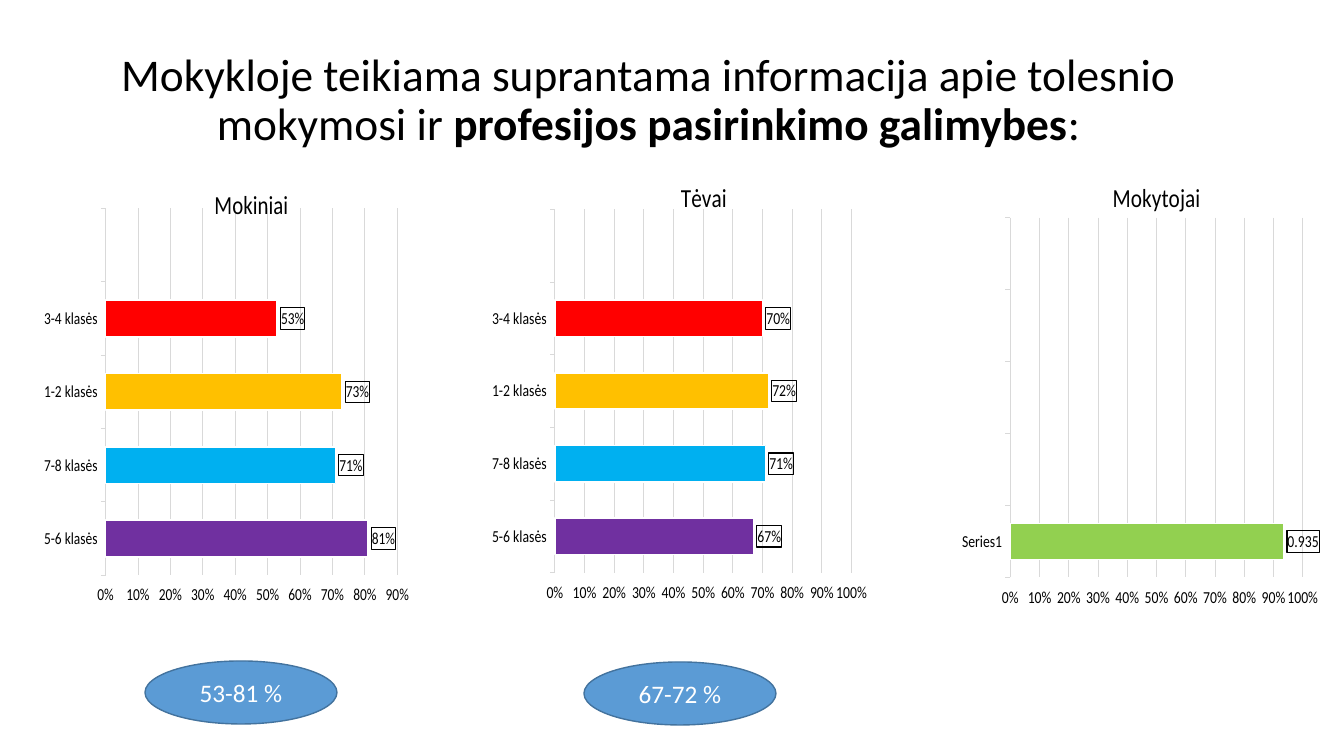
from lxml.etree import SubElement
from pptx import Presentation
from pptx.chart.data import CategoryChartData
from pptx.dml.color import RGBColor
from pptx.enum.chart import XL_CHART_TYPE, XL_LABEL_POSITION, XL_TICK_MARK
from pptx.enum.shapes import MSO_SHAPE
from pptx.enum.text import MSO_ANCHOR, PP_ALIGN
from pptx.oxml import parse_xml
from pptx.oxml.ns import nsdecls, qn
from pptx.util import Emu, Pt

BLACK = RGBColor(0x00, 0x00, 0x00)
WHITE = RGBColor(0xFF, 0xFF, 0xFF)
GRID = RGBColor(0xD9, 0xD9, 0xD9)
RED = RGBColor(0xFF, 0x00, 0x00)
AMBER = RGBColor(0xFF, 0xC0, 0x00)
SKY = RGBColor(0x00, 0xB0, 0xF0)
PURPLE = RGBColor(0x70, 0x30, 0xA0)
GREEN = RGBColor(0x92, 0xD0, 0x50)
BLUE = RGBColor(0x5B, 0x9B, 0xD5)
OUTLINE = RGBColor(0x43, 0x73, 0x9E)


def px(*lengths):
    return [Emu(round(length * 914400 / 100.8)) for length in lengths]


def style_font(font, size, color=BLACK, bold=False):
    for key, value in dict(name="Calibri", size=Pt(size), bold=bold).items():
        setattr(font, key, value)
    font.color.rgb = color


presentation = Presentation()
presentation.slide_width, presentation.slide_height = px(1344, 756)
slide = presentation.slides.add_slide(presentation.slide_layouts[6])

# Heading
heading = slide.shapes.add_textbox(*px(86, 0, 1125, 141)).text_frame
heading.word_wrap = True
heading.vertical_anchor = MSO_ANCHOR.TOP
heading.margin_top = px(52)[0]
question = heading.paragraphs[0]
question.alignment = PP_ALIGN.CENTER
question.line_spacing = 0.9
for words, bold in [
    ("Mokykloje teikiama suprantama informacija apie tolesnio mokymosi ir ", False),
    ("profesijos pasirinkimo galimybes", True),
    (":", False),
]:
    run = question.add_run()
    run.text = words
    style_font(run.font, 32.4, bold=bold)

# One bar chart per group of respondents
grades = ["5-6 klasės", "7-8 klasės", "1-2 klasės", "3-4 klasės", ""]
grade_colors = [PURPLE, SKY, AMBER, RED]
groups = [
    ("Mokiniai", (44, 167, 365, 477), grades, [0.81, 0.71, 0.73, 0.53, None],
     grade_colors, 0.9, "0%", (0, 0.087, 1, 0.769)),
    ("Tėvai", (492, 159, 375, 485), grades, [0.67, 0.71, 0.72, 0.7, None],
     grade_colors, 1, "0%", (0.014, 0.104, 0.968, 0.749)),
    ("Mokytojai", (962, 159, 358, 485), ["Series1", "", "", "", ""],
     [0.935, None, None, None, None], [GREEN], 1, "General", (0, 0.121, 1, 0.742)),
]
for group, box, categories, shares, colors, top_share, label_format, plot_box in groups:
    data = CategoryChartData()
    data.categories = categories
    data.add_series(group, shares)
    chart = slide.shapes.add_chart(XL_CHART_TYPE.BAR_CLUSTERED, *px(*box), data).chart
    chart.has_legend = False
    style_font(chart.font, 10)
    chart.has_title = True
    chart.chart_title.text_frame.text = group
    style_font(chart.chart_title.text_frame.paragraphs[0].runs[0].font, 18.6)

    share_axis = chart.value_axis
    for axis in (chart.category_axis, share_axis):
        axis.major_tick_mark = XL_TICK_MARK.OUTSIDE
        style_font(axis.tick_labels.font, 12)
    for line in (chart.category_axis.format.line, share_axis.major_gridlines.format.line):
        line.color.rgb = GRID
        line.width = Pt(0.75)
    share_axis.format.line.fill.background()
    limits = dict(minimum_scale=0, maximum_scale=top_share, major_unit=0.1)
    for key, value in limits.items():
        setattr(share_axis, key, value)
    share_axis.tick_labels.number_format = "0%"
    share_axis.tick_labels.number_format_is_linked = False

    plot = chart.plots[0]
    plot.gap_width = 100
    plot.vary_by_categories = False
    bars = plot.series[0]
    bars.invert_if_negative = False
    bars.format.fill.solid()
    bars.format.fill.fore_color.rgb = BLUE
    for index, color in enumerate(colors):
        bar = bars.points[index].format
        bar.fill.solid()
        bar.fill.fore_color.rgb = color
        bar.line.color.rgb = WHITE
        bar.line.width = Pt(1.5)

    labels = bars.data_labels
    style_font(labels.font, 12)
    label_settings = dict(show_value=True, number_format=label_format,
                          number_format_is_linked=False,
                          position=XL_LABEL_POSITION.OUTSIDE_END)
    for key, value in label_settings.items():
        setattr(labels, key, value)
    label_border = parse_xml(
        f'<c:spPr {nsdecls("c", "a")}><a:noFill/><a:ln w="12700"><a:solidFill>'
        f'<a:srgbClr val="{BLACK}"/></a:solidFill></a:ln></c:spPr>')
    labels._element.find(qn("c:txPr")).addprevious(label_border)

    plot_area = chart._chartSpace.chart.plotArea
    for automatic in plot_area.findall(qn("c:layout")):
        plot_area.remove(automatic)
    layout = parse_xml(f'<c:layout {nsdecls("c")}><c:manualLayout/></c:layout>')
    plot_area.insert(0, layout)
    placement = dict(layoutTarget="inner", xMode="edge", yMode="edge",
                     **dict(zip("xywh", plot_box)))
    for tag, value in placement.items():
        SubElement(layout[0], qn(f"c:{tag}")).set("val", str(value))

# Range of answers below the first two charts
for share_range, left, top in [("53-81 %", 145, 661), ("67-72 %", 584, 662)]:
    badge = slide.shapes.add_shape(MSO_SHAPE.OVAL, *px(left, top, 192, 63))
    badge.shadow.inherit = False
    badge.fill.solid()
    badge.fill.fore_color.rgb = BLUE
    badge.line.color.rgb = OUTLINE
    badge.line.width = Pt(1)
    badge.text_frame.vertical_anchor = MSO_ANCHOR.MIDDLE
    caption = badge.text_frame.paragraphs[0]
    caption.alignment = PP_ALIGN.CENTER
    caption.add_run().text = share_range
    style_font(caption.runs[0].font, 18, WHITE)

presentation.save("out.pptx")
